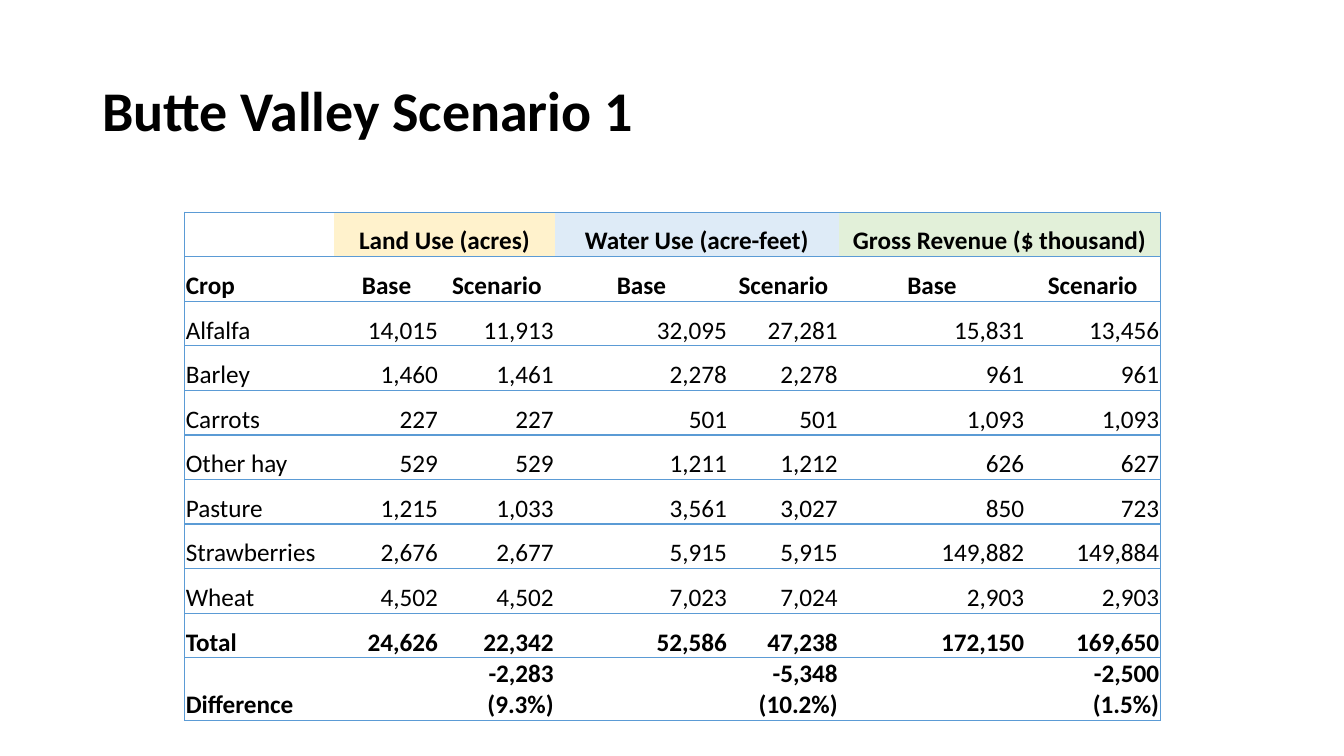
"""Build the Butte Valley Scenario 1 slide with its crop comparison table."""
import pptx
import pptx.dml.color
import pptx.enum.text
import pptx.oxml
import pptx.oxml.ns
import pptx.util

Pt = pptx.util.Pt
ALIGN = pptx.enum.text.PP_ALIGN
ANCHOR = pptx.enum.text.MSO_ANCHOR

TITLE = "Butte Valley Scenario 1"
GROUPS = [
    ("Land Use (acres)", "FFF2CC"),
    ("Water Use (acre-feet)", "DEEBF7"),
    ("Gross Revenue ($ thousand)", "E2F0D9"),
]
HEADINGS = ["Crop"] + ["Base", "Scenario"] * len(GROUPS)
CROPS = [
    ["Alfalfa", "14,015", "11,913", "32,095", "27,281", "15,831", "13,456"],
    ["Barley", "1,460", "1,461", "2,278", "2,278", "961", "961"],
    ["Carrots", "227", "227", "501", "501", "1,093", "1,093"],
    ["Other hay", "529", "529", "1,211", "1,212", "626", "627"],
    ["Pasture", "1,215", "1,033", "3,561", "3,027", "850", "723"],
    ["Strawberries", "2,676", "2,677", "5,915", "5,915", "149,882", "149,884"],
    ["Wheat", "4,502", "4,502", "7,023", "7,024", "2,903", "2,903"],
]
SUMMARY = [
    ["Total", "24,626", "22,342", "52,586", "47,238", "172,150", "169,650"],
    ["Difference", "", "-2,283 (9.3%)", "", "-5,348 (10.2%)", "", "-2,500 (1.5%)"],
]
THEME = {
    "font": "Calibri",
    "text": "000000",
    "paper": "FFFFFF",
    "line": "5B9BD5",
    "title_size": 40,
    "cell_size": 18,
}
COLUMN_WIDTHS = [106.7, 74.9, 82.7, 123.8, 79.1, 133.2, 96.4]
ROW_HEIGHT = 31.86
TABLE_LEFT, TABLE_TOP = 132, 151.5
NO_STYLE = "{2D5ABB26-0587-4C30-8999-92F81FD0307C}"


def rgb(name):
    """Return a theme or literal colour."""
    return pptx.dml.color.RGBColor.from_string(THEME.get(name, name))


def format_text(para, size, bold):
    """Apply the shared typeface to every run of a paragraph."""
    for span in para.runs:
        span.font.name = THEME["font"]
        span.font.size = Pt(size)
        span.font.bold = bold
        span.font.color.rgb = rgb("text")


def add_borders(cell, sides):
    """Draw thin lines on the named sides of a cell."""
    properties = cell._tc.get_or_add_tcPr()
    for side in sides:
        properties.append(pptx.oxml.parse_xml(
            f'<a:ln{side} {pptx.oxml.ns.nsdecls("a")} w="{Pt(1)}"><a:solidFill>'
            f'<a:srgbClr val="{THEME["line"]}"/></a:solidFill></a:ln{side}>'))


def fill_cell(cell, text, sides, fill, align, bold):
    """Write and format one table cell."""
    add_borders(cell, sides)
    cell.fill.solid()
    cell.fill.fore_color.rgb = rgb(fill)
    cell.vertical_anchor = ANCHOR.BOTTOM
    cell.margin_left = cell.margin_right = cell.margin_top = Pt(0.75)
    cell.margin_bottom = 0
    cell.text_frame.text = text
    para = cell.text_frame.paragraphs[0]
    para.alignment = align
    para.font.size = Pt(THEME["cell_size"])
    format_text(para, THEME["cell_size"], bold)


def add_title(page):
    """Place the slide title."""
    title = page.shapes.title
    title.left, title.top, title.width, title.height = Pt(66), Pt(28.75), Pt(828), Pt(104.4)
    title.text_frame.text = TITLE
    title.text_frame.vertical_anchor = ANCHOR.MIDDLE
    para = title.text_frame.paragraphs[0]
    para.alignment = ALIGN.LEFT
    para.line_spacing = 0.9
    format_text(para, THEME["title_size"], True)


def add_crop_table(page):
    """Add the table of base and scenario values."""
    group_row = [""] + [text for name, _ in GROUPS for text in (name, "")]
    rows = [group_row, HEADINGS] + CROPS + SUMMARY
    last = len(COLUMN_WIDTHS) - 1
    frame = page.shapes.add_table(
        len(rows), len(COLUMN_WIDTHS), Pt(TABLE_LEFT), Pt(TABLE_TOP),
        Pt(sum(COLUMN_WIDTHS)), Pt(ROW_HEIGHT * len(rows)))
    table = frame.table
    table.first_row = table.horz_banding = False
    table._tbl.tblPr.find(pptx.oxml.ns.qn("a:tableStyleId")).text = NO_STYLE
    for column, width in zip(table.columns, COLUMN_WIDTHS):
        column.width = Pt(width)
    for r, values in enumerate(rows):
        table.rows[r].height = Pt(ROW_HEIGHT)
        for c, text in enumerate(values):
            reach = c + 1 if r == 0 and c % 2 else c
            sides = ["L"] * (c == 0) + ["R"] * (reach == last) + ["T", "B"]
            fill = GROUPS[(c - 1) // 2][1] if r == 0 and c else "paper"
            align = ALIGN.LEFT if c == 0 else ALIGN.CENTER if r < 2 else ALIGN.RIGHT
            fill_cell(table.cell(r, c), text, sides, fill, align, values not in CROPS)
    for c in range(1, last, 2):
        table.cell(0, c).merge(table.cell(0, c + 1))


def main():
    """Create and save the deck."""
    deck = pptx.Presentation()
    deck.slide_width, deck.slide_height = Pt(960), Pt(540)
    page = deck.slides.add_slide(deck.slide_layouts[5])
    add_title(page)
    add_crop_table(page)
    deck.save("out.pptx")


if __name__ == "__main__":
    main()
